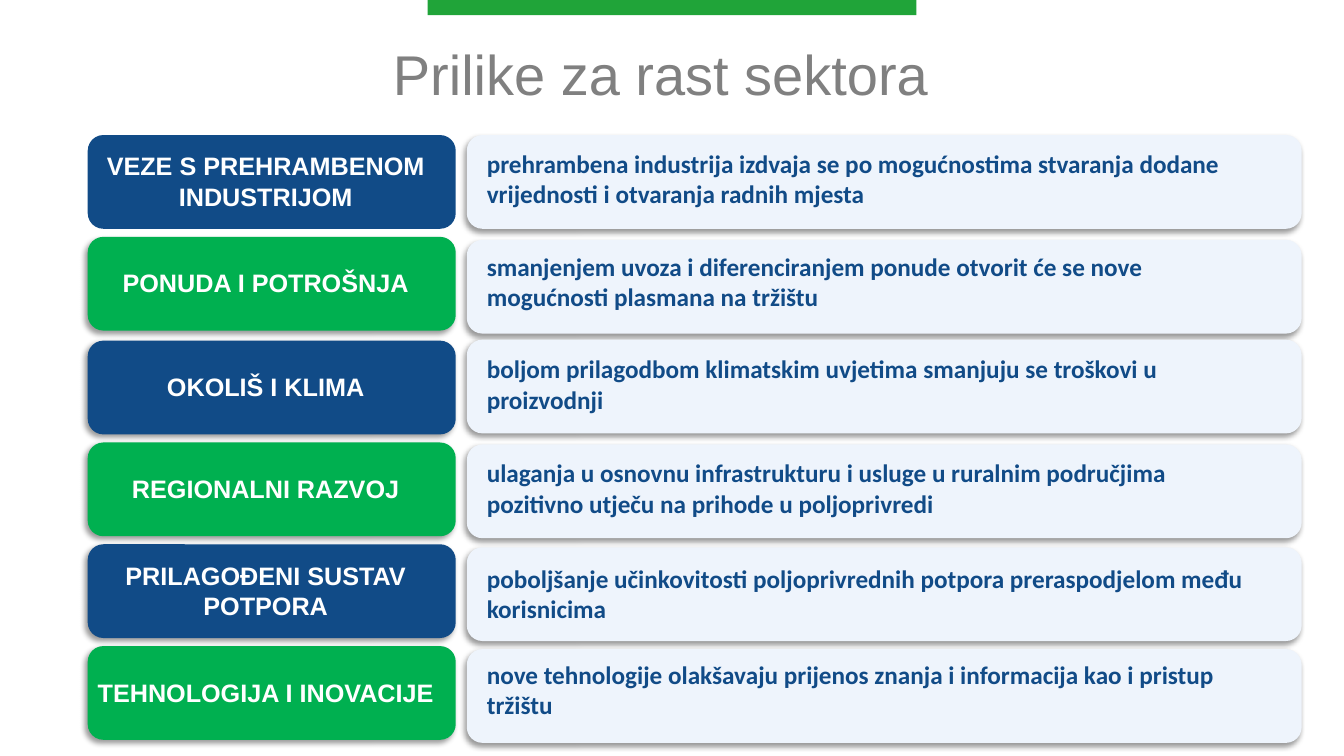
from lxml import etree
from pptx import Presentation
from pptx.dml.color import RGBColor
from pptx.enum.shapes import MSO_SHAPE
from pptx.enum.text import MSO_ANCHOR, PP_ALIGN
from pptx.oxml import parse_xml
from pptx.util import Inches, Pt

RECT, ROUNDED = MSO_SHAPE.RECTANGLE, MSO_SHAPE.ROUNDED_RECTANGLE
TOP, MIDDLE = MSO_ANCHOR.TOP, MSO_ANCHOR.MIDDLE
LEFT, CENTER = PP_ALIGN.LEFT, PP_ALIGN.CENTER

TITLE = "Prilike za rast sektora"
# label, description, label top, panel top, description top
ROWS = [
    ("VEZE S PREHRAMBENOM INDUSTRIJOM",
     "prehrambena industrija izdvaja se po mogućnostima stvaranja dodane "
     "vrijednosti i otvaranja radnih mjesta", 1.34, 1.34, 1.42),
    ("PONUDA I POTROŠNJA",
     "smanjenjem uvoza i diferenciranjem ponude otvorit će se nove "
     "mogućnosti plasmana na tržištu", 2.35, 2.38, 2.44),
    ("OKOLIŠ I KLIMA",
     "boljom prilagodbom klimatskim uvjetima smanjuju se troškovi u "
     "proizvodnji", 3.38, 3.37, 3.46),
    ("REGIONALNI RAZVOJ",
     "ulaganja u osnovnu infrastrukturu i usluge u ruralnim područjima "
     "pozitivno utječu na prihode u poljoprivredi", 4.39, 4.41, 4.49),
    ("PRILAGOĐENI SUSTAV POTPORA",
     "poboljšanje učinkovitosti poljoprivrednih potpora preraspodjelom među "
     "korisnicima", 5.4, 5.43, 5.54),
    ("TEHNOLOGIJA I INOVACIJE",
     "nove tehnologije olakšavaju prijenos znanja i informacija kao i pristup "
     "tržištu", 6.41, 6.44, 6.49),
]
BLUE, GREEN, PALE, WHITE, GREY = "114B87", "00B050", "EEF4FC", "FFFFFF", "808080"
ROW_H, TEXT_H = 0.93, 0.71
SHADOW = (
    '<a:effectLst xmlns:a="http://schemas.openxmlformats.org/drawingml/2006/main">'
    '<a:outerShdw blurRad="50800" dist="38100" dir="8100000" algn="tr" rotWithShape="0">'
    '<a:srgbClr val="000000"><a:alpha val="40000"/></a:srgbClr>'
    '</a:outerShdw></a:effectLst>')


def rgb(value):
    return RGBColor.from_string(value)


def add_block(s, kind, box, color, shadow=False):
    sp = s.shapes.add_shape(kind, *map(Inches, box))
    sp.shadow.inherit = False
    sp.fill.solid()
    sp.fill.fore_color.rgb = rgb(color)
    sp.line.fill.background()
    if shadow:
        empty = sp._element.spPr.find("{*}effectLst")
        sp._element.spPr.replace(empty, parse_xml(SHADOW))


def add_text(s, box, text, font, size, color, bold, align, anchor):
    tf = s.shapes.add_textbox(*map(Inches, box)).text_frame
    tf.word_wrap = True
    tf.vertical_anchor = anchor
    p = tf.paragraphs[0]
    p.text = text
    p.alignment = align
    p.font.name, p.font.size, p.font.bold = font, Pt(size), bold
    p.font.color.rgb = rgb(color)
    return p


prs = Presentation()
prs.slide_width, prs.slide_height = Inches(13.33), Inches(7.5)
s = prs.slides.add_slide(prs.slide_layouts[6])

add_block(s, RECT, (4.24, 0, 4.85, 0.15), "20A439")
title = add_text(s, (1.27, 0.47, 10.56, 0.59), TITLE, "Arial", 40, GREY, False, CENTER, MIDDLE)
title.line_spacing = 0.9
title.space_before = Pt(10)

for i, (label, description, label_top, panel_top, text_top) in enumerate(ROWS):
    add_block(s, ROUNDED, (4.63, panel_top, 8.28, ROW_H), PALE, True)
    add_block(s, ROUNDED, (0.87, label_top, 3.65, ROW_H), (BLUE, GREEN)[i % 2], i > 0)
    add_text(s, (0.64, label_top + 0.1, 3.99, TEXT_H), label,
             "Arial", 18, WHITE, True, CENTER, MIDDLE)
    add_text(s, (4.73, text_top, 7.93, TEXT_H), description,
             "Calibri", 18, BLUE, True, LEFT, TOP)

prs.save("out.pptx")
